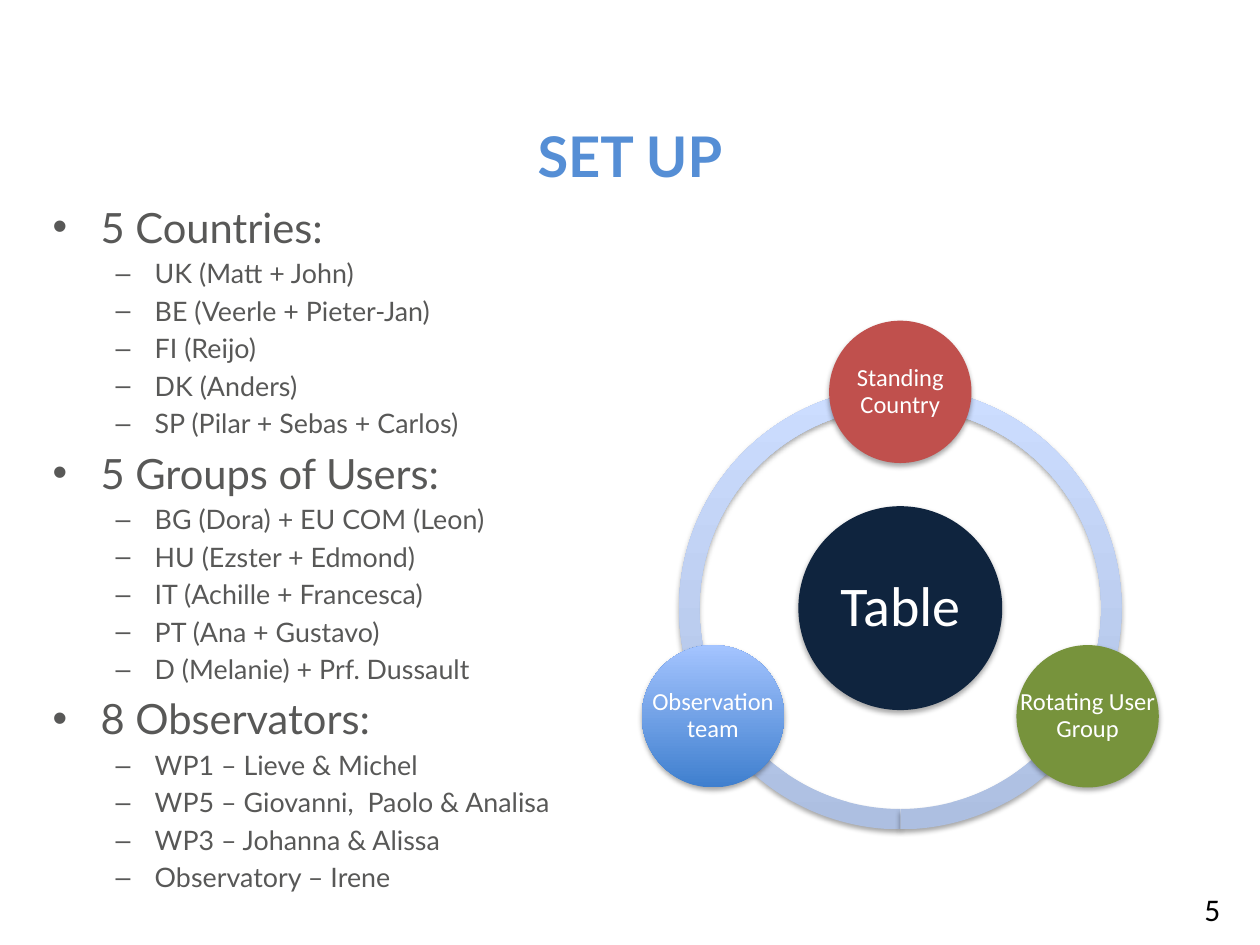
from dataclasses import dataclass
from math import cos, radians, sin

from lxml import etree
from pptx import Presentation, util as u
from pptx.dml import color
from pptx.enum import shapes, text
from pptx.oxml import ns


@dataclass(frozen=True)
class Theme:
    head: str = "Lato"
    body: str = "Calibri"
    title: str = "558ED5"
    gray: str = "585857"
    black: str = "000000"
    white: str = "FFFFFF"
    navy: str = "0F243E"
    red: str = "C0504D"
    green: str = "77933C"
    blue: tuple = ("3F7FCE", "A4C4FF")
    ring: tuple = ("ADBFE1", "CCDDFF")
    big: float = 32
    topic: float = 23.8
    page: float = 18
    item: float = 15.3
    label: float = 14


T = Theme()

TOPICS = {
    "5 Countries:": [
        "UK (Matt + John)",
        "BE (Veerle + Pieter-Jan)",
        "FI (Reijo)",
        "DK (Anders)",
        "SP (Pilar + Sebas + Carlos)",
    ],
    "5 Groups of Users:": [
        "BG (Dora) + EU COM (Leon)",
        "HU (Ezster + Edmond)",
        "IT (Achille + Francesca)",
        "PT (Ana + Gustavo)",
        "D (Melanie) + Prf. Dussault",
    ],
    "8 Observators:": [
        "WP1 – Lieve & Michel",
        "WP5 – Giovanni,  Paolo & Analisa",
        "WP3 – Johanna & Alissa",
        "Observatory – Irene",
    ],
}

# Lengths in cm, angles in degrees clockwise from the right
MID = (18.15, 12.26)
RING, HUB, NODE, ORBIT = 8.92, 4.11, 2.87, 4.36
BAND = 0.046
ARCS = [(90, 162), (18, 90), (162, 18)]
NODES = [
    (-90, "Standing Country", T.red),
    (30, "Rotating User Group", T.green),
    (150, "Observation team", T.blue),
]


def apply(obj, vals):
    for key, val in vals.items():
        setattr(obj, key, val)


def add_box(slide, place, inset=None, anchor=text.MSO_ANCHOR.TOP):
    """Add an empty wrapping text box and return its frame."""
    frame = slide.shapes.add_textbox(*map(u.Cm, place)).text_frame
    apply(frame, {"word_wrap": True, "vertical_anchor": anchor})
    if inset is not None:
        sides = ("left", "top", "right", "bottom")
        apply(frame, {f"margin_{side}": u.Cm(inset) for side in sides})
    return frame


def write(para, words, face, size, tint, bold=False, **form):
    apply(para, form)
    run = para.add_run()
    run.text = words
    apply(run.font, {"name": face, "size": u.Pt(size), "bold": bold})
    run.font.color.rgb = color.RGBColor.from_string(tint)


def add_mark(para, mark, left, hang):
    """Give a paragraph a bullet sign with a hanging indent."""
    props = para._p.get_or_add_pPr()
    props.set("marL", str(u.Cm(left)))
    props.set("indent", str(-u.Cm(hang)))
    etree.SubElement(props, ns.qn("a:buFont"), typeface="Arial")
    etree.SubElement(props, ns.qn("a:buChar"), char=mark)


def add_list(slide):
    frame = add_box(slide, (0.81, 3.94, 24.23, 11.99))
    kinds = {0: ("•", 0.97, 0.97, T.topic), 1: ("–", 2.06, 0.79, T.item)}
    rows = []
    for topic, items in TOPICS.items():
        rows += [(0, topic)] + [(1, item) for item in items]
    for num, (level, words) in enumerate(rows):
        para = frame.add_paragraph() if num else frame.paragraphs[0]
        mark, left, hang, size = kinds[level]
        add_mark(para, mark, left, hang)
        gap = u.Pt(size * 0.2 if num else 0)
        write(para, words, T.head, size, T.gray, level=level, space_before=gap)


def add_shade(shape):
    """Add a soft shadow below the shape."""
    shape.shadow.inherit = False
    effects = shape._element.spPr.find(ns.qn("a:effectLst"))
    shade = etree.SubElement(
        effects, ns.qn("a:outerShdw"), blurRad=str(u.Pt(3.1)),
        dist=str(u.Pt(1.8)), dir="5400000", rotWithShape="0")
    tint = etree.SubElement(shade, ns.qn("a:srgbClr"), val=T.black)
    etree.SubElement(tint, ns.qn("a:alpha"), val="35000")


def paint(shape, tint):
    """Fill with one colour, or with a pair running from bottom to top."""
    fill = shape.fill
    if isinstance(tint, str):
        fill.solid()
        fill.fore_color.rgb = color.RGBColor.from_string(tint)
    else:
        fill.gradient()
        fill.gradient_angle = 90
        for stop, code in zip(fill.gradient_stops, tint):
            stop.color.rgb = color.RGBColor.from_string(code)
    shape.line.fill.background()
    add_shade(shape)


def square(mid, size):
    """Return left, top, width and height around a centre."""
    return mid[0] - size / 2, mid[1] - size / 2, size, size


def add_arc(slide, start, end):
    arc = slide.shapes.add_shape(
        shapes.MSO_SHAPE.BLOCK_ARC, *map(u.Cm, square(MID, RING)))
    # Angles are stored in 60000ths of a degree, adjustments in 100000ths
    for num, val in enumerate((start * 0.6, end * 0.6, BAND)):
        arc.adjustments[num] = val
    paint(arc, T.ring)


def add_disc(slide, mid, size, words, tint, type_size, inset):
    place = square(mid, size)
    disc = slide.shapes.add_shape(shapes.MSO_SHAPE.OVAL, *map(u.Cm, place))
    paint(disc, tint)
    frame = add_box(slide, place, inset, text.MSO_ANCHOR.MIDDLE)
    write(frame.paragraphs[0], words, T.body, type_size, T.white,
          alignment=text.PP_ALIGN.CENTER, line_spacing=0.9)


def add_cycle(slide):
    for start, end in ARCS:
        add_arc(slide, start, end)
    add_disc(slide, MID, HUB, "Table", T.navy, T.big, 0.1)
    for angle, words, tint in NODES:
        turn = radians(angle)
        mid = (MID[0] + ORBIT * cos(turn), MID[1] + ORBIT * sin(turn))
        add_disc(slide, mid, NODE, words, tint, T.label, 0.05)


def main():
    deck = Presentation()
    apply(deck, {"slide_width": u.Cm(25.4), "slide_height": u.Cm(19.05)})
    slide = deck.slides.add_slide(deck.slide_layouts[6])
    title = add_box(slide, (1.27, 2.31, 22.86, 1.63),
                    anchor=text.MSO_ANCHOR.MIDDLE)
    write(title.paragraphs[0], "SET UP", T.head, T.big, T.title, True,
          alignment=text.PP_ALIGN.CENTER)
    page = add_box(slide, (24.03, 17.81, 1.02, 1.02))
    write(page.paragraphs[0], "5", T.body, T.page, T.black)
    add_list(slide)
    add_cycle(slide)
    deck.save("out.pptx")


if __name__ == "__main__":
    main()
